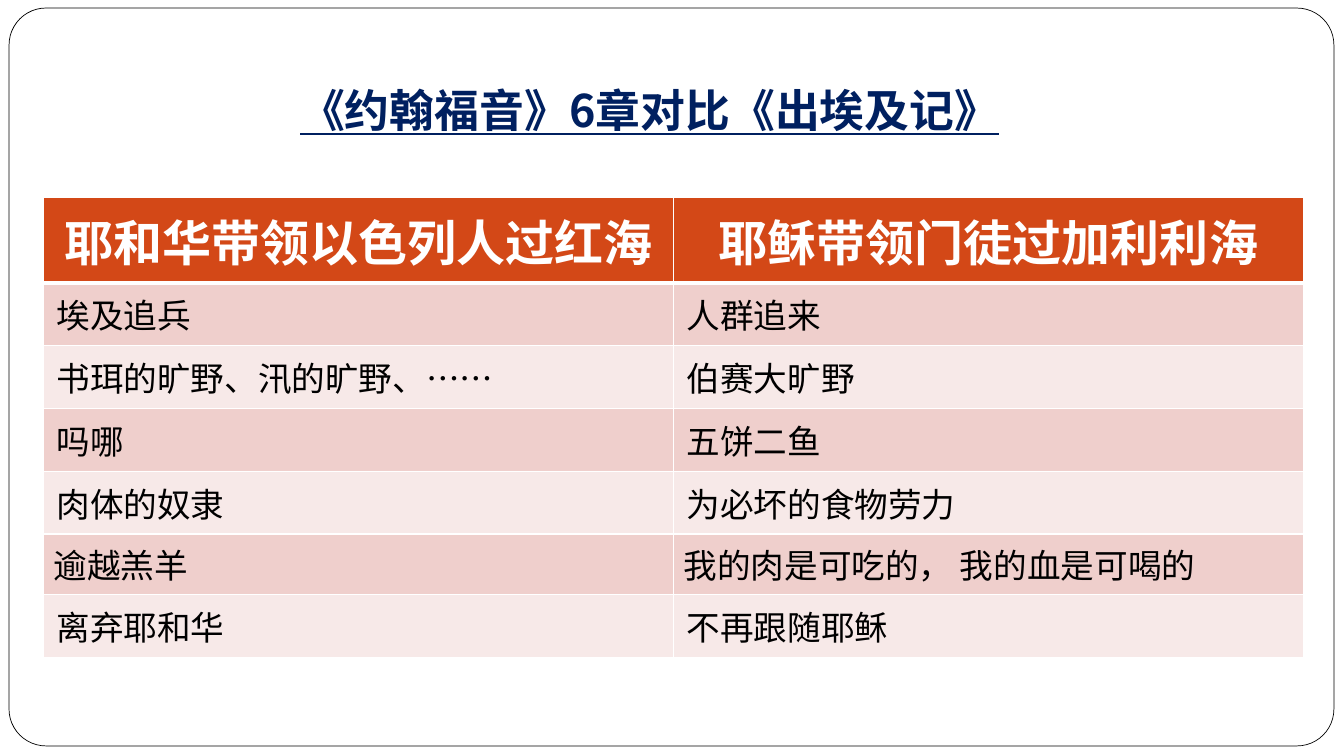
from dataclasses import dataclass

from lxml import etree
from pptx import Presentation
from pptx.dml.color import RGBColor
from pptx.enum.shapes import MSO_SHAPE
from pptx.enum.text import MSO_ANCHOR, MSO_AUTO_SIZE, PP_ALIGN
from pptx.oxml.ns import qn
from pptx.util import Emu, Pt

ROUNDED = MSO_SHAPE.ROUNDED_RECTANGLE
CENTER, LEFT = PP_ALIGN.CENTER, PP_ALIGN.LEFT
BOTTOM, TOP = MSO_ANCHOR.BOTTOM, MSO_ANCHOR.TOP
NO_AUTOFIT = MSO_AUTO_SIZE.NONE
TITLE_ONLY = 5
EMU_PER_PX = 9144  # 100 px to the inch

TITLE = "《约翰福音》6章对比《出埃及记》"
ROWS = [
    ("耶和华带领以色列人过红海", "耶稣带领门徒过加利利海"),
    ("埃及追兵", "人群追来"),
    ("书珥的旷野、汛的旷野、……", "伯赛大旷野"),
    ("吗哪", "五饼二鱼"),
    ("肉体的奴隶", "为必坏的食物劳力"),
    ("逾越羔羊", "我的肉是可吃的， 我的血是可喝的"),
    ("离弃耶和华", "不再跟随耶稣"),
]
WIDE_INSETS, NARROW_INSETS = (13, 7), (10, 5)
NARROW_ROW = 5


@dataclass(frozen=True)
class Theme:
    font: str = "Noto Sans CJK SC"
    white: str = "FFFFFF"
    black: str = "000000"
    navy: str = "002060"
    header: str = "D34817"
    bands: tuple = ("EFCFCC", "F7E9E8")
    title_size: int = 32
    header_size: int = 35
    body_size: int = 24
    frame_line: float = 0.5
    cell_line: float = 1
    header_line: float = 3


def px(n):
    return Emu(n * EMU_PER_PX)


def rgb(color):
    return RGBColor.from_string(color)


class SlideBuilder:
    def __init__(self, s, theme):
        self.s, self.theme = s, theme

    def text(self, tf, text, size, color, align=LEFT, bold=False, underline=False):
        tf.text = text
        p = tf.paragraphs[0]
        p.alignment = align
        font = p.runs[0].font
        font.size, font.bold, font.underline = Pt(size), bold, underline
        font.name = self.theme.font
        font.color.rgb = rgb(color)
        east_asian = etree.SubElement(p.runs[0]._r.get_or_add_rPr(), qn("a:ea"))
        east_asian.set("typeface", self.theme.font)

    def frame(self, x, y, w, h):
        """Add the rounded page outline behind everything else."""
        sp = self.s.shapes.add_shape(ROUNDED, px(x), px(y), px(w), px(h))
        sp.adjustments[0] = 0.05
        sp.shadow.inherit = False
        sp.fill.solid()
        sp.fill.fore_color.rgb = rgb(self.theme.white)
        sp.line.color.rgb = rgb(self.theme.black)
        sp.line.width = Pt(self.theme.frame_line)
        self.s.shapes._spTree.insert(2, sp._element)

    def title(self, text, x, y, w, h):
        sp = self.s.shapes.title
        sp.left, sp.top, sp.width, sp.height = px(x), px(y), px(w), px(h)
        tf = sp.text_frame
        tf.word_wrap, tf.auto_size = True, NO_AUTOFIT
        tf.vertical_anchor = BOTTOM
        tf.margin_left = tf.margin_right = tf.margin_bottom = px(10)
        tf.margin_top = px(5)
        self.text(tf, text, self.theme.title_size, self.theme.navy,
                  CENTER, bold=True, underline=True)

    def borders(self, cell, top, bottom):
        tc_pr = cell._tc.get_or_add_tcPr()
        widths = {"lnL": self.theme.cell_line, "lnR": self.theme.cell_line,
                  "lnT": top, "lnB": bottom}
        for tag, width in widths.items():
            line = etree.SubElement(tc_pr, qn(f"a:{tag}"), w=str(int(Pt(width))))
            fill = etree.SubElement(line, qn("a:solidFill"))
            etree.SubElement(fill, qn("a:srgbClr"), val=self.theme.white)

    def cell(self, cell, text, row):
        t = self.theme
        self.borders(cell, t.header_line if row == 1 else t.cell_line,
                     t.header_line if row == 0 else t.cell_line)
        cell.fill.solid()
        cell.fill.fore_color.rgb = rgb(t.bands[(row - 1) % 2] if row else t.header)
        side, edge = NARROW_INSETS if row == NARROW_ROW else WIDE_INSETS
        cell.margin_left = cell.margin_right = px(side)
        cell.margin_top = cell.margin_bottom = px(edge)
        cell.vertical_anchor = TOP
        if row == 0:
            self.text(cell.text_frame, text, t.header_size, t.white, CENTER, bold=True)
        else:
            self.text(cell.text_frame, text, t.body_size, t.black)

    def table(self, rows, x, y, w, header_h, row_h):
        n_cols = len(rows[0])
        h = header_h + row_h * (len(rows) - 1)
        table = self.s.shapes.add_table(len(rows), n_cols, px(x), px(y), px(w), px(h)).table
        for column in table.columns:
            column.width = px(w // n_cols)
        for i, texts in enumerate(rows):
            table.rows[i].height = px(row_h if i else header_h)
            for j, text in enumerate(texts):
                self.cell(table.cell(i, j), text, i)


def main():
    prs = Presentation()
    prs.slide_width, prs.slide_height = px(1333), px(750)
    s = prs.slides.add_slide(prs.slide_layouts[TITLE_ONLY])
    builder = SlideBuilder(s, Theme())
    builder.frame(9, 8, 1314, 732)
    builder.title(TITLE, 78, 42, 1133, 103)
    builder.table(ROWS, 43, 196, 1250, header_h=80, row_h=60)
    prs.save("out.pptx")


if __name__ == "__main__":
    main()
